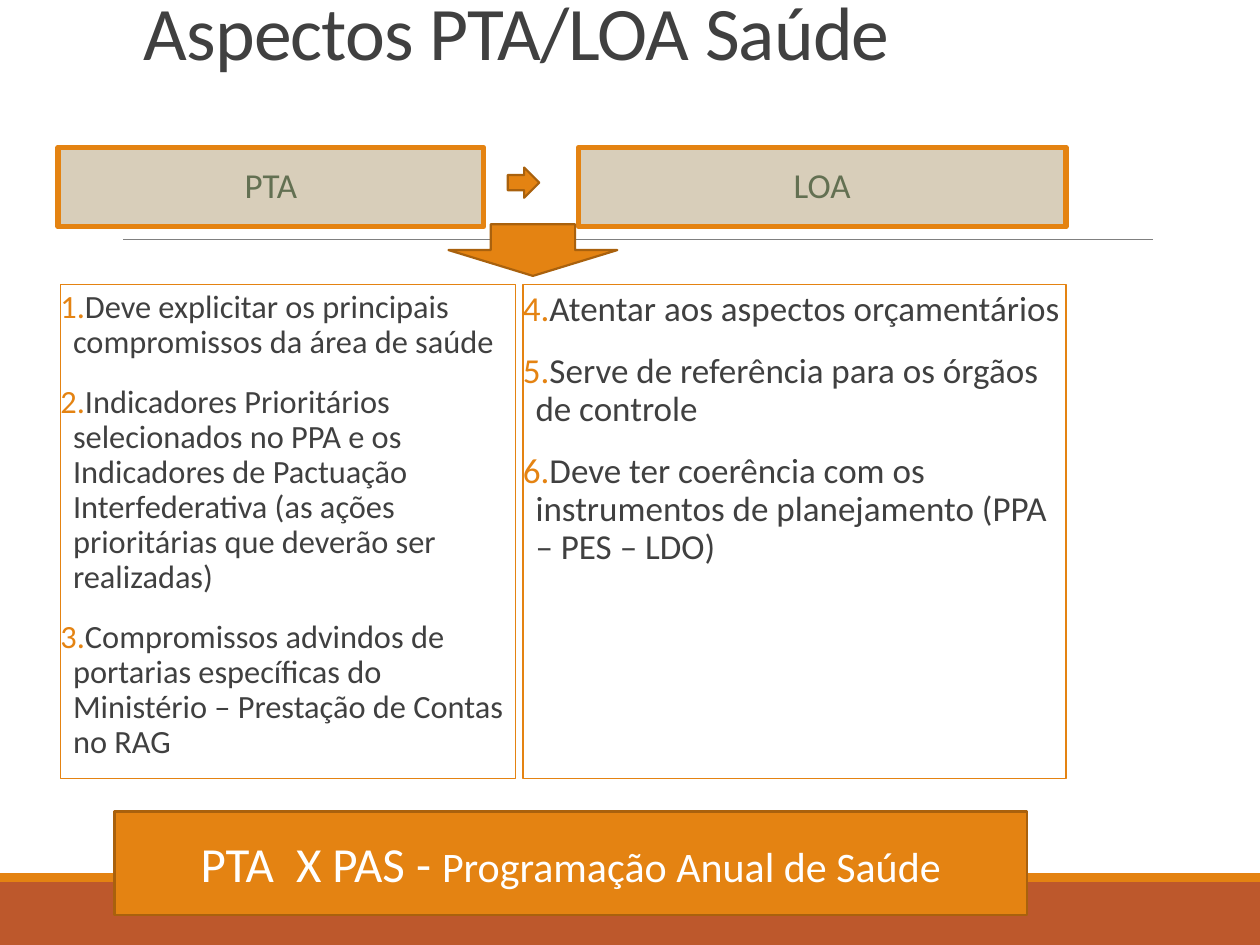
from dataclasses import dataclass

from lxml import etree
from pptx import Presentation
from pptx.dml.color import RGBColor
from pptx.enum import shapes, text
from pptx.oxml import ns
from pptx.util import Inches, Pt

SHAPE = shapes.MSO_SHAPE
ANCHOR = text.MSO_ANCHOR
ALIGN = text.PP_ALIGN


@dataclass(frozen=True)
class Theme:
    font: str = "Calibri"
    orange: str = "E48312"
    dark_orange: str = "A9610D"
    rust: str = "BD582C"
    sand: str = "D8CEBA"
    green: str = "637052"
    ink: str = "404040"
    grey: str = "808080"
    white: str = "FFFFFF"
    title_size: float = 43.2
    header_size: float = 20
    pta_size: float = 18.5
    loa_size: float = 20
    banner_size: float = 28
    banner_detail_size: float = 24


THEME = Theme()
LIST_FORMAT = {"line_spacing": 0.9, "space_before": Pt(12), "space_after": Pt(2)}
HEADER_FORMAT = {**LIST_FORMAT, "alignment": ALIGN.CENTER}

PTA_ITEMS = [
    "Deve explicitar os principais compromissos da área de saúde",
    "Indicadores Prioritários selecionados no PPA e os Indicadores de Pactuação "
    "Interfederativa (as ações prioritárias que deverão ser realizadas)",
    "Compromissos advindos de portarias específicas do Ministério – "
    "Prestação de Contas no RAG",
]
LOA_ITEMS = [
    "Atentar aos aspectos orçamentários",
    "Serve de referência para os órgãos de controle",
    "Deve ter coerência com os instrumentos de planejamento (PPA – PES – LDO)",
]


def apply_format(target, values):
    for name, value in values.items():
        setattr(target, name, value)


def add_run(paragraph, words, size, color):
    run = paragraph.add_run()
    run.text = words
    apply_format(run.font, {"name": THEME.font, "size": Pt(size)})
    run.font.color.rgb = RGBColor.from_string(color)
    return run


def add_block(slide, kind, box, fill=None, line=None, width=1.25):
    block = slide.shapes.add_shape(kind, *map(Inches, box))
    block.shadow.inherit = False
    if fill:
        block.fill.solid()
        block.fill.fore_color.rgb = RGBColor.from_string(fill)
    else:
        block.fill.background()
    if line:
        block.line.color.rgb = RGBColor.from_string(line)
        block.line.width = Pt(width)
    else:
        block.line.fill.background()
    return block


def add_rule(slide, left, right, y):
    rule = slide.shapes.add_connector(
        shapes.MSO_CONNECTOR.STRAIGHT, Inches(left), Inches(y), Inches(right), Inches(y))
    rule.line.color.rgb = RGBColor.from_string(THEME.grey)
    rule.line.width = Pt(0.5)
    etree.SubElement(rule._element.spPr, ns.qn("a:effectLst"))


def set_title(slide, words):
    title = slide.shapes.title
    apply_format(title, {"left": Inches(0.63), "top": Inches(0.24),
                         "width": Inches(6.94), "height": Inches(0.41)})
    apply_format(title.text_frame, {"vertical_anchor": ANCHOR.BOTTOM, "word_wrap": True,
                                    "auto_size": text.MSO_AUTO_SIZE.NONE})
    paragraph = title.text_frame.paragraphs[0]
    apply_format(paragraph, {"alignment": ALIGN.CENTER, "line_spacing": 0.85})
    run = add_run(paragraph, words, THEME.title_size, THEME.ink)
    run.font._element.set("spc", "-50")


def add_header(slide, box, words):
    header = add_block(slide, SHAPE.RECTANGLE, box, THEME.sand, THEME.orange, 3)
    header.text_frame.vertical_anchor = ANCHOR.MIDDLE
    paragraph = header.text_frame.paragraphs[0]
    apply_format(paragraph, HEADER_FORMAT)
    add_run(paragraph, words, THEME.header_size, THEME.green)


def number_paragraph(paragraph, start):
    properties = paragraph._p.get_or_add_pPr()
    indent = Inches(0.1)
    properties.set("marL", str(indent))
    properties.set("indent", str(-indent))
    color = etree.SubElement(properties, ns.qn("a:buClr"))
    etree.SubElement(color, ns.qn("a:srgbClr"), val=THEME.orange)
    numbering = etree.SubElement(properties, ns.qn("a:buAutoNum"), type="arabicPeriod")
    if start > 1:
        numbering.set("startAt", str(start))


def add_numbered_list(slide, box, items, size, start=1):
    panel = add_block(slide, SHAPE.RECTANGLE, box, line=THEME.orange, width=0.75)
    frame = panel.text_frame
    apply_format(frame, {"vertical_anchor": ANCHOR.TOP, "word_wrap": True,
                         "margin_left": 0, "margin_right": 0})
    for index, item in enumerate(items):
        paragraph = frame.add_paragraph() if index else frame.paragraphs[0]
        apply_format(paragraph, {**LIST_FORMAT, "alignment": ALIGN.LEFT})
        number_paragraph(paragraph, start)
        add_run(paragraph, item, size, THEME.ink)


def add_banner(slide, box, heading, detail):
    banner = add_block(slide, SHAPE.RECTANGLE, box, THEME.orange, THEME.dark_orange)
    banner.text_frame.vertical_anchor = ANCHOR.MIDDLE
    paragraph = banner.text_frame.paragraphs[0]
    paragraph.alignment = ALIGN.CENTER
    add_run(paragraph, heading, THEME.banner_size, THEME.white)
    add_run(paragraph, detail, THEME.banner_detail_size, THEME.white)


def main():
    deck = Presentation()
    apply_format(deck, {"slide_width": Inches(10), "slide_height": Inches(7.5)})
    slide = deck.slides.add_slide(deck.slide_layouts[5])

    # Footer bands and rule
    add_block(slide, SHAPE.RECTANGLE, (0, 7, 10, 0.5), THEME.rust)
    add_block(slide, SHAPE.RECTANGLE, (0, 6.93, 10, 0.07), THEME.orange)
    add_rule(slide, 0.98, 9.15, 1.9)

    set_title(slide, "Aspectos PTA/LOA Saúde")

    # PTA and LOA columns
    add_header(slide, (0.46, 1.17, 3.38, 0.63), "PTA")
    add_numbered_list(slide, (0.48, 2.26, 3.61, 3.92), PTA_ITEMS, THEME.pta_size)
    add_header(slide, (4.59, 1.17, 3.87, 0.63), "LOA")
    add_numbered_list(slide, (4.15, 2.26, 4.31, 3.92), LOA_ITEMS, THEME.loa_size,
                      start=len(PTA_ITEMS) + 1)

    # Arrows between the parts
    for kind, box in ((SHAPE.RIGHT_ARROW, (4.03, 1.33, 0.25, 0.24)),
                      (SHAPE.DOWN_ARROW, (3.56, 1.78, 1.34, 0.41))):
        add_block(slide, kind, box, THEME.orange, THEME.dark_orange)

    # Closing banner
    add_banner(slide, (0.91, 6.44, 7.24, 0.82), "PTA  X PAS - ",
               "Programação Anual de Saúde")

    deck.save("out.pptx")


if __name__ == "__main__":
    main()
